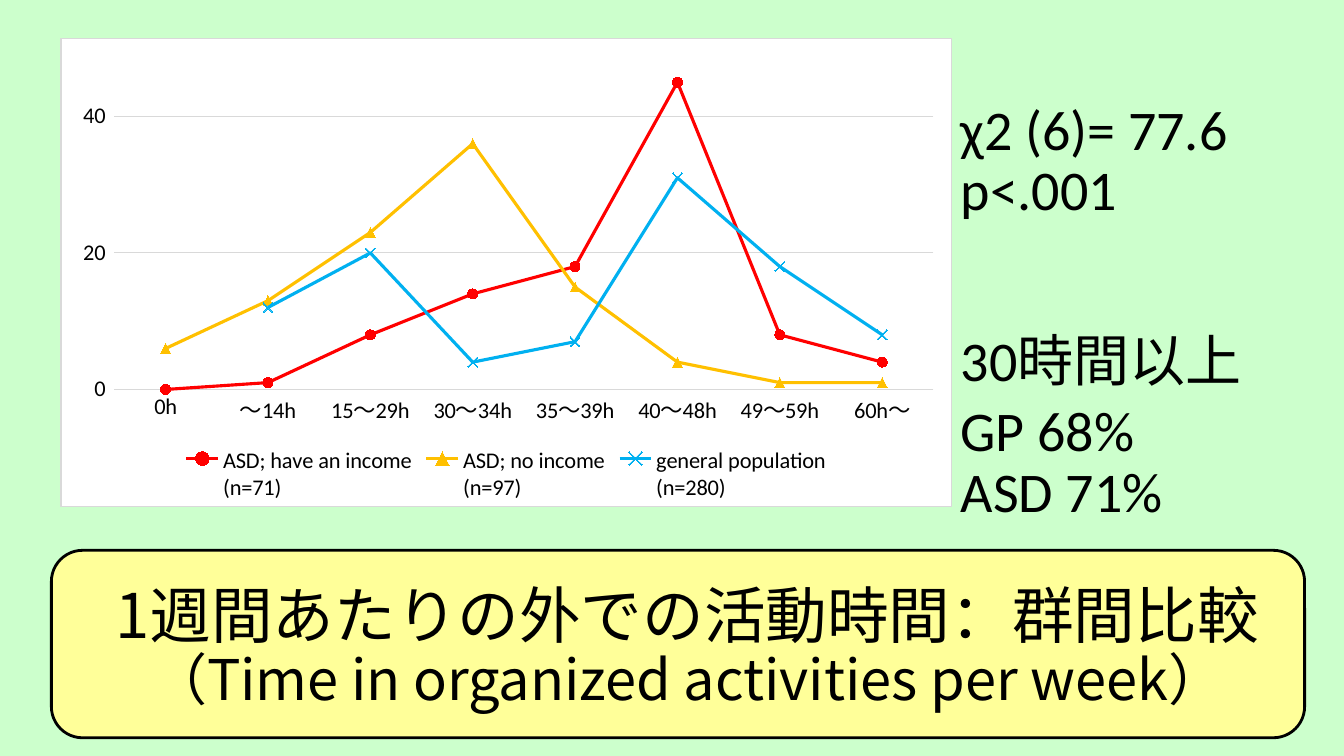
"""Build the slide comparing weekly hours of organized activities between groups."""
from lxml import etree
from pptx import Presentation, util as u
from pptx.chart.data import CategoryChartData
from pptx.dml.color import RGBColor
from pptx.enum import chart as ch, shapes, text
from pptx.oxml import parse_xml
from pptx.oxml.ns import nsdecls, qn

PX = 9144
BLACK = RGBColor(0x00, 0x00, 0x00)
WHITE = RGBColor(0xFF, 0xFF, 0xFF)
GREY = RGBColor(0xD9, 0xD9, 0xD9)
GREEN = RGBColor(0xCC, 0xFF, 0xCC)
YELLOW = RGBColor(0xFF, 0xFF, 0x99)
RED = RGBColor(0xFF, 0x00, 0x00)
AMBER = RGBColor(0xFF, 0xC0, 0x00)
BLUE = RGBColor(0x00, 0xB0, 0xF0)
MARKER = ch.XL_MARKER_STYLE


def place(px):
    return [v * PX for v in px]


def format_text(tf, size, font):
    tf.word_wrap = True
    tf.auto_size = text.MSO_AUTO_SIZE.NONE
    tf.vertical_anchor = text.MSO_ANCHOR.BOTTOM
    for p in tf.paragraphs:
        p.line_spacing = 0.9
        p.space_before = u.Pt(0)
        for r in p.runs:
            r.font.size = u.Pt(size)
            r.font.name = font
            r.font.color.rgb = BLACK


prs = Presentation()
prs.slide_width, prs.slide_height = place((1333, 750))
s = prs.slides.add_slide(prs.slide_layouts[0])
s.background.fill.solid()
s.background.fill.fore_color.rgb = GREEN
subtitle = s.placeholders[1].element
subtitle.getparent().remove(subtitle)

groups = [
    ("ASD; have an income\n(n=71)", (0, 1, 8, 14, 18, 45, 8, 4), RED, MARKER.CIRCLE),
    ("ASD; no income\n(n=97)", (6, 13, 23, 36, 15, 4, 1, 1), AMBER, MARKER.TRIANGLE),
    ("general population\n(n=280)", (None, 12, 20, 4, 7, 31, 18, 8), BLUE, MARKER.X),
]
data = CategoryChartData()
data.categories = ["0h", "～14h", "15～29h", "30～34h", "35～39h", "40～48h", "49～59h", "60h～"]
for name, values, color, marker in groups:
    data.add_series(name, values)
chart = s.shapes.add_chart(
    ch.XL_CHART_TYPE.LINE_MARKERS, *place((60, 38, 884, 465)), data).chart
chart.has_title = False
chart.font.name = "Calibri"
chart.font.size = u.Pt(16)
chart.font.color.rgb = BLACK
chart.has_legend = True
chart.legend.position = ch.XL_LEGEND_POSITION.BOTTOM
chart.legend.include_in_layout = False
chart.legend.font.size = u.Pt(16)

for series, (name, values, color, marker) in zip(chart.plots[0].series, groups):
    series.smooth = False
    series.format.line.color.rgb = color
    series.format.line.width = u.Pt(2.25)
    series.marker.style = marker
    series.marker.size = 7
    series.marker.format.fill.solid()
    series.marker.format.fill.fore_color.rgb = color
    series.marker.format.line.color.rgb = color

hours, percent = chart.category_axis, chart.value_axis
for axis in (hours, percent):
    axis.major_tick_mark = axis.minor_tick_mark = ch.XL_TICK_MARK.NONE
    axis.tick_labels.font.size = u.Pt(16)
percent.minimum_scale, percent.maximum_scale, percent.major_unit = 0, 50, 20
percent.tick_labels.number_format = "0_ "
percent.tick_labels.number_format_is_linked = False
percent.format.line.fill.background()
for line in (hours.format.line, percent.major_gridlines.format.line):
    line.color.rgb = GREY
    line.width = u.Pt(0.75)

space = chart.element
space.find(qn("c:chart")).addnext(parse_xml(
    f'<c:spPr {nsdecls("c", "a")}><a:solidFill><a:srgbClr val="{WHITE}"/></a:solidFill>'
    f'<a:ln w="9525"><a:solidFill><a:srgbClr val="{GREY}"/></a:solidFill></a:ln></c:spPr>'))
plot_area = space.find(".//" + qn("c:plotArea"))
for old in plot_area.findall(qn("c:layout")):
    plot_area.remove(old)
layout = etree.Element(qn("c:layout"))
plot_area.insert(0, layout)
manual = etree.SubElement(layout, qn("c:manualLayout"))
for tag, val in [("layoutTarget", "inner"), ("xMode", "edge"), ("yMode", "edge"),
                 ("x", "0.06"), ("y", "0.02"), ("w", "0.92"), ("h", "0.73")]:
    etree.SubElement(manual, qn("c:" + tag)).set("val", val)

for top, width, lines in [
    (101, 374, "χ2 (6)= 77.6\np<.001"),
    (270, 374, "30時間以上"),
    (400, 296, "GP 68%\nASD 71%"),
]:
    tf = s.shapes.add_textbox(*place((943, top, width, 125))).text_frame
    tf.text = lines
    format_text(tf, 40, "Calibri")

sp = s.shapes.add_shape(shapes.MSO_SHAPE.ROUNDED_RECTANGLE, *place((51, 546, 1243, 186)))
sp.shadow.inherit = False
sp.fill.solid()
sp.fill.fore_color.rgb = YELLOW
sp.line.color.rgb = BLACK
sp.line.width = u.Pt(2)

title = s.shapes.title
title.left, title.top, title.width, title.height = place((70, 587, 1224, 125))
sp.element.addnext(title.element)
tf = title.text_frame
tf.text = "1週間あたりの外での活動時間：群間比較\v（Time in organized activities per week）"
format_text(tf, 44, "Noto Sans CJK JP")
p = tf.paragraphs[0]
p.alignment = text.PP_ALIGN.CENTER
p.runs[1].font.size = u.Pt(40)

prs.save("out.pptx")
